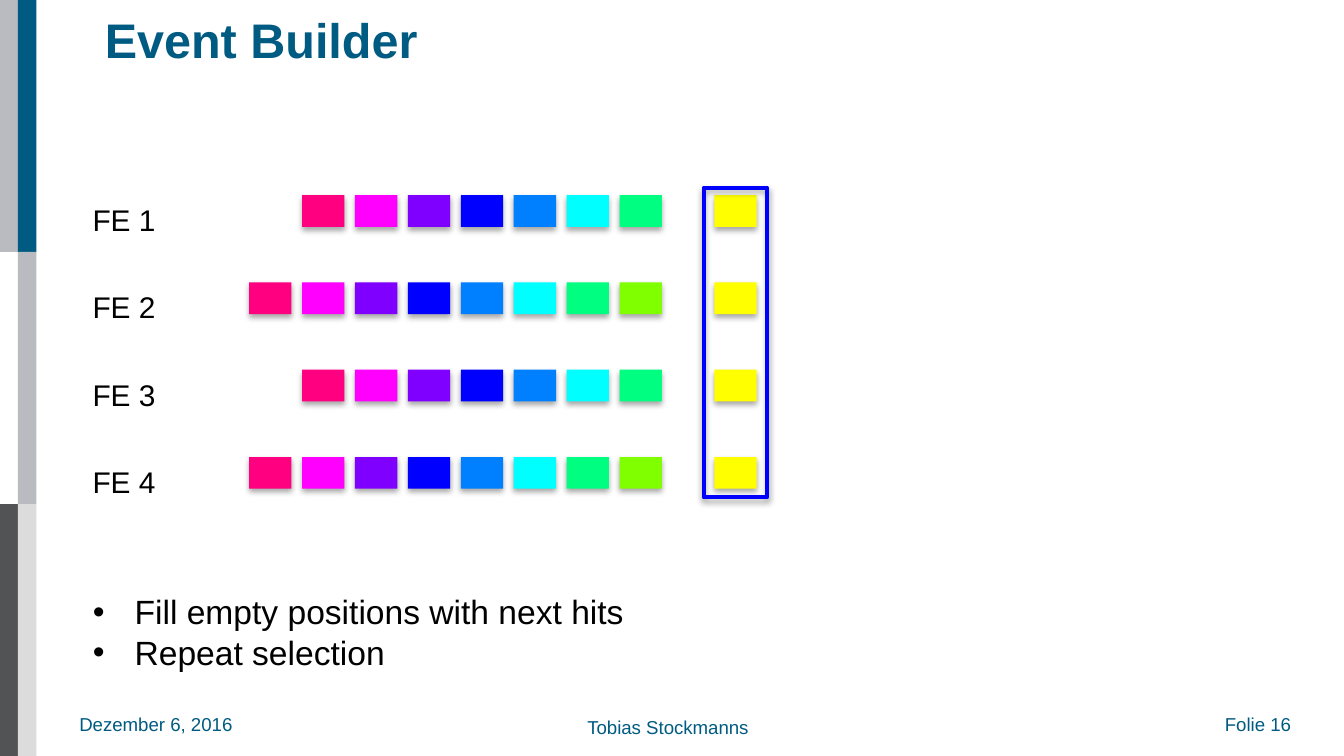
import pptx
import pptx.util
import pptx.oxml
import pptx.dml.color
import pptx.enum.shapes
import pptx.enum.text

Cm, Pt = pptx.util.Cm, pptx.util.Pt
RECT = pptx.enum.shapes.MSO_SHAPE.RECTANGLE
ANCHOR = pptx.enum.text.MSO_ANCHOR
FIT = pptx.enum.text.MSO_AUTO_SIZE

# Content
TITLE = "Event Builder"
BULLETS = ["Fill empty positions with next hits", "Repeat selection"]
HIT_COLOURS = ["FF0080", "FF00FF", "8000FF", "0000FF",
               "0080FF", "00FFFF", "00FF80", "80FF00"]
FRONT_ENDS = [("FE 1", 7), ("FE 2", 8), ("FE 3", 7), ("FE 4", 8)]  # label, waiting hits
FOOTERS = [  # text, left, top, width
    ("Dezember 6, 2016", 1.5, 13.48, 3.23),
    ("Folie 16", 23.15, 13.48, 1.57),
    ("Tobias Stockmanns", 11.1, 13.54, 3.1),
]
SIDEBAR = [("B9BBC0", None, "515355"), ("005B82", "B9BBC0", "DCDCDC")]

THEME = {
    "font": "Arial", "brand": "005B82", "text": "000000",
    "selected": "FFFF00", "frame": "0000FF",
    "title": 26, "body": 18, "label": 16, "footer": 10,
}

# Grid, in centimetres
SLIDE_W, SLIDE_H = 25.4, 14.29
BAR_W, BAR_STEP, BAR_H = 0.35, 0.34, SLIDE_H / 3
HIT_W, HIT_H, HIT_STEP = 0.8, 0.6, 1
ROW_TOP, ROW_STEP = 3.69, 1.65
LAST_HIT_X, SELECTED_X = 11.71, 13.5
LEFT = 1.5

SHADOW = """<a:effectLst xmlns:a="http://schemas.openxmlformats.org/drawingml/2006/main">
<a:outerShdw blurRad="40000" dist="23000" dir="5400000" rotWithShape="0">
<a:srgbClr val="000000"><a:alpha val="35000"/></a:srgbClr>
</a:outerShdw></a:effectLst>"""


def rgb(colour):
    return pptx.dml.color.RGBColor.from_string(colour)


def place(s, x, y, w, h):
    s.left, s.top, s.width, s.height = Cm(x), Cm(y), Cm(w), Cm(h)


def style(tf, size, colour, bold=False):
    for p in tf.paragraphs:
        for r in p.runs:
            r.font.name, r.font.size = THEME["font"], Pt(size)
            r.font.bold, r.font.color.rgb = bold, rgb(colour)


def no_margins(tf):
    tf.margin_left = tf.margin_top = tf.margin_right = tf.margin_bottom = 0


def add_rect(x, y, w, h, fill=None, line=None, shadow=False):
    s = slide.shapes.add_shape(RECT, Cm(x), Cm(y), Cm(w), Cm(h))
    s.shadow.inherit = False
    if fill:
        s.fill.solid()
        s.fill.fore_color.rgb = rgb(fill)
    else:
        s.fill.background()
    if line:
        s.line.color.rgb = rgb(line)
        s.line.width = Pt(2.25)
    else:
        s.line.fill.background()
    if shadow:
        sp_pr = s._element.spPr
        sp_pr.replace(sp_pr[-1], pptx.oxml.parse_xml(SHADOW))


def add_text(text, x, y, w, h, size, colour, margins=True):
    tf = slide.shapes.add_textbox(Cm(x), Cm(y), Cm(w), Cm(h)).text_frame
    tf.text = text
    tf.word_wrap = False
    tf.auto_size = FIT.SHAPE_TO_FIT_TEXT
    if not margins:
        no_margins(tf)
    style(tf, size, colour)


prs = pptx.Presentation()
prs.slide_width, prs.slide_height = Cm(SLIDE_W), Cm(SLIDE_H)
slide = prs.slides.add_slide(prs.slide_layouts[1])

# Sidebar
for col, colours in enumerate(SIDEBAR):
    for row, colour in enumerate(colours):
        if colour:
            add_rect(col * BAR_STEP, row * BAR_H, BAR_W, BAR_H, colour)

# Footer
for text, x, y, w in FOOTERS:
    add_text(text, x, y, w, 0.43, THEME["footer"], THEME["brand"], margins=False)

# Title
title = slide.shapes.title
place(title, 1.98, 0.15, 18.47, 1.19)
tf = title.text_frame
tf.text = TITLE
tf.vertical_anchor = ANCHOR.MIDDLE
tf.paragraphs[0].alignment = pptx.enum.text.PP_ALIGN.LEFT
no_margins(tf)
style(tf, THEME["title"], THEME["brand"], bold=True)

# Front-end rows: label, queue of hits, selected hit
for row, (label, count) in enumerate(FRONT_ENDS):
    y = ROW_TOP + row * ROW_STEP
    add_text(label, LEFT, y, 1.73, 0.94, THEME["label"], THEME["text"])
    for i, colour in enumerate(HIT_COLOURS[:count]):
        x = LAST_HIT_X - (count - 1 - i) * HIT_STEP
        add_rect(x, y, HIT_W, HIT_H, colour, shadow=True)
    add_rect(SELECTED_X, y, HIT_W, HIT_H, THEME["selected"], shadow=True)

# Selection frame
add_rect(13.3, 3.55, 1.2, 5.85, line=THEME["frame"], shadow=True)

# Bullet list
body = slide.placeholders[1]
place(body, LEFT, 11.05, 10.62, 1.8)
tf = body.text_frame
tf.text = "\n".join(BULLETS)
tf.word_wrap = False
tf.auto_size = FIT.SHAPE_TO_FIT_TEXT
tf.vertical_anchor = ANCHOR.TOP
for p in tf.paragraphs:
    p.space_before = Pt(0)
    pPr = p._p.get_or_add_pPr()
    pPr.set("marL", str(Cm(0.79)))
    pPr.set("indent", str(-Cm(0.79)))
style(tf, THEME["body"], THEME["text"])

prs.save("out.pptx")
